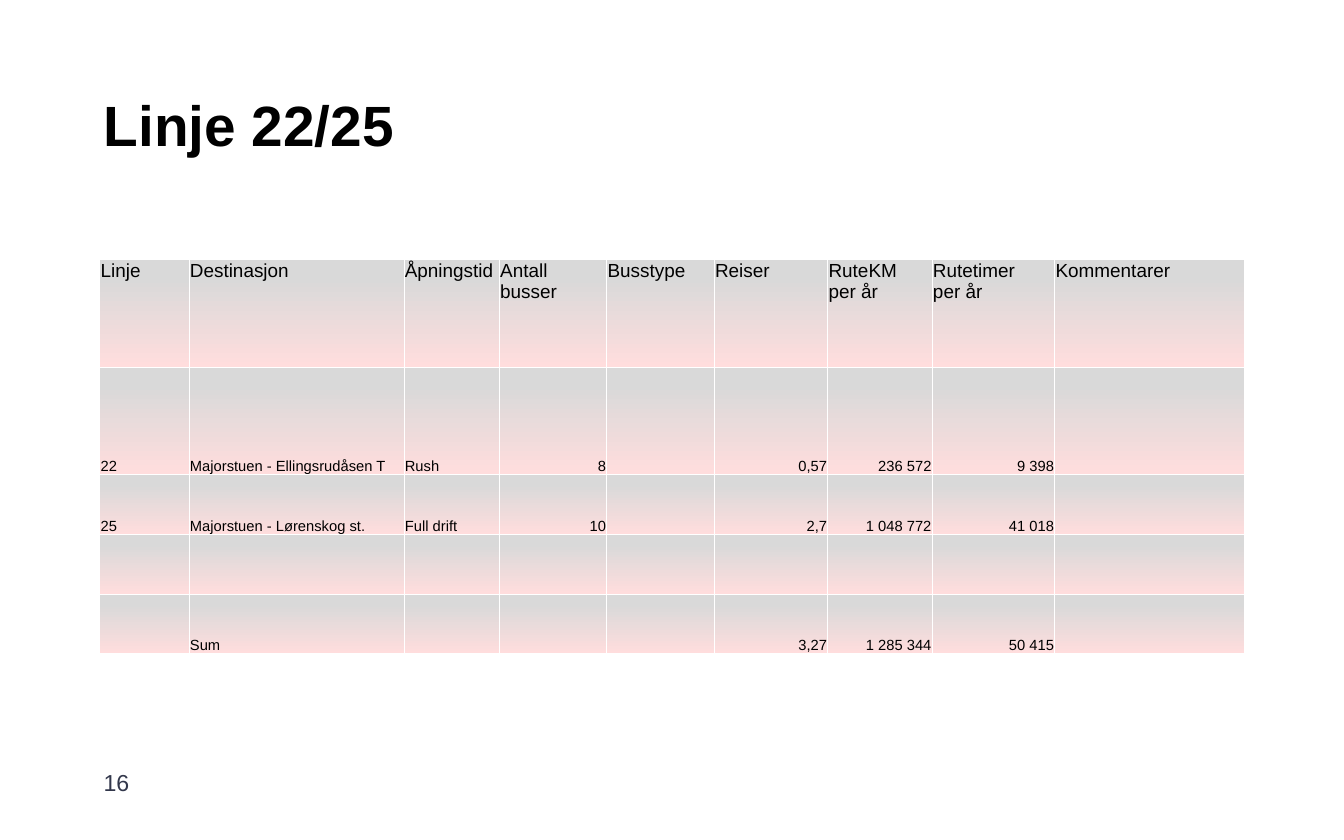
import dataclasses

import pptx
import pptx.dml.color
import pptx.enum.text
import pptx.oxml
import pptx.oxml.ns
import pptx.util

Inches = pptx.util.Inches
Pt = pptx.util.Pt
ANCHOR = pptx.enum.text.MSO_ANCHOR
ALIGN = pptx.enum.text.PP_ALIGN


@dataclasses.dataclass(frozen=True)
class Theme:
    font: str = "Arial"
    text: str = "000000"
    number: str = "32374B"
    border: str = "FFFFFF"
    gradient: tuple = ((0, "D9D9D9"), (17, "D9D9D9"), (100, "FFDDDD"))
    title_size: int = 54
    number_size: int = 22
    header_size: int = 18
    body_size: int = 14


COLUMNS = [1.18, 2.84, 1.26, 1.42, 1.42, 1.5, 1.38, 1.62, 2.5]
ROW_HEIGHTS = [1.42, 1.42, 0.79, 0.79, 0.79]
NUMERIC_COLUMNS = range(3, 8)
ROUTES = [
    ["Linje", "Destinasjon", "Åpningstid", "Antall busser", "Busstype", "Reiser",
     "RuteKM\nper år", "Rutetimer\nper år", "Kommentarer"],
    ["22", "Majorstuen - Ellingsrudåsen T", "Rush", "8", "", "0,57", "236 572", "9 398", ""],
    ["25", "Majorstuen - Lørenskog st.", "Full drift", "10", "", "2,7", "1 048 772", "41 018", ""],
    [""] * 9,
    ["", "Sum", "", "", "", "3,27", "1 285 344", "50 415", ""],
]


def apply(target, values):
    for name, value in values.items():
        setattr(target, name, value)


class SlideBuilder:
    def __init__(self, slide, theme):
        self.s = slide
        self.theme = theme

    def style(self, tf, size, color, bold=False, align=ALIGN.LEFT):
        for p in tf.paragraphs:
            p.alignment = align
            for r in p.runs:
                apply(r.font, {"name": self.theme.font, "size": Pt(size), "bold": bold})
                r.font.color.rgb = pptx.dml.color.RGBColor.from_string(color)

    def text(self, text, box, size, color, anchor, bold=False):
        tf = self.s.shapes.add_textbox(*map(Inches, box)).text_frame
        apply(tf, {
            "text": text, "word_wrap": True, "vertical_anchor": anchor,
            "margin_left": Inches(0.18), "margin_right": Inches(0.18),
            "margin_top": Inches(0.09), "margin_bottom": Inches(0.09),
        })
        self.style(tf, size, color, bold)

    def paint_cell(self, cell):
        """Add the white borders and the vertical gradient, in schema order."""
        ns = pptx.oxml.ns.nsdecls("a")
        parts = [
            f'<a:{side} {ns} w="{Pt(1)}"><a:solidFill><a:srgbClr val="{self.theme.border}"/>'
            f'</a:solidFill></a:{side}>'
            for side in ("lnL", "lnR", "lnT", "lnB")
        ]
        stops = "".join(
            f'<a:gs pos="{pos * 1000}"><a:srgbClr val="{color}"/></a:gs>'
            for pos, color in self.theme.gradient
        )
        parts.append(f'<a:gradFill {ns} rotWithShape="1"><a:gsLst>{stops}</a:gsLst>'
                     '<a:lin ang="5400000" scaled="0"/></a:gradFill>')
        tc_pr = cell._tc.get_or_add_tcPr()
        for part in parts:
            tc_pr.append(pptx.oxml.parse_xml(part))

    def table(self, rows, left, top, widths, heights):
        table = self.s.shapes.add_table(
            len(rows), len(widths), Inches(left), Inches(top),
            Inches(sum(widths)), Inches(sum(heights))).table
        apply(table, {"first_row": False, "horz_banding": False})
        for column, width in zip(table.columns, widths):
            column.width = Inches(width)
        for row, height in zip(table.rows, heights):
            row.height = Inches(height)
        for i, row in enumerate(rows):
            header = i == 0
            size = self.theme.header_size if header else self.theme.body_size
            for j, text in enumerate(row):
                cell = table.cell(i, j)
                apply(cell, {
                    "text": text,
                    "vertical_anchor": ANCHOR.TOP if header else ANCHOR.BOTTOM,
                    "margin_left": Inches(0.01), "margin_right": Inches(0.01),
                    "margin_top": Inches(0.01), "margin_bottom": 0,
                })
                right = not header and j in NUMERIC_COLUMNS
                self.style(cell.text_frame, size, self.theme.text,
                           align=ALIGN.RIGHT if right else ALIGN.LEFT)
                self.paint_cell(cell)


def main():
    prs = pptx.Presentation()
    apply(prs, {"slide_width": Inches(17.76), "slide_height": Inches(11.1)})
    theme = Theme()
    builder = SlideBuilder(prs.slides.add_slide(prs.slide_layouts[6]), theme)
    builder.text("Linje 22/25", (1.19, 1, 15.68, 1.17), theme.title_size, theme.text,
                 ANCHOR.BOTTOM, bold=True)
    builder.table(ROUTES, 1.32, 3.43, COLUMNS, ROW_HEIGHTS)
    builder.text("16", (1.19, 10.1, 0.79, 0.47), theme.number_size, theme.number, ANCHOR.MIDDLE)
    prs.save("out.pptx")


if __name__ == "__main__":
    main()
